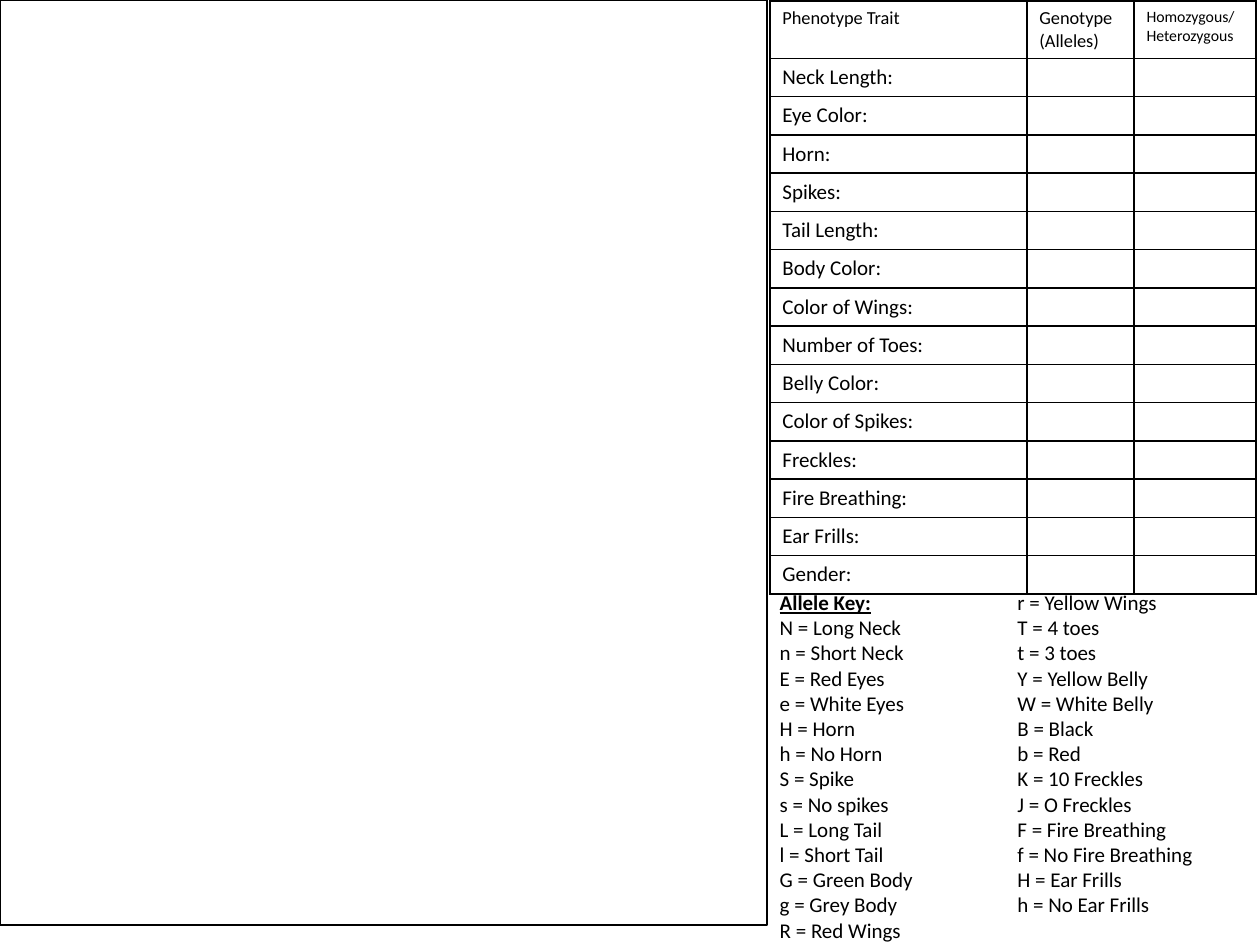
from lxml.etree import SubElement
from pptx import Presentation
from pptx.dml.color import RGBColor
from pptx.enum.shapes import MSO_SHAPE
from pptx.enum.text import MSO_ANCHOR, PP_ALIGN
from pptx.oxml.ns import qn
from pptx.util import Inches, Pt

COLORS = {"ink": "000000", "paper": "FFFFFF"}
FONT = "Calibri"

HEADERS = [("Phenotype Trait", 10.5), ("Genotype\n(Alleles)", 10.5),
           ("Homozygous/\nHeterozygous", 9)]
TRAITS = ["Neck Length", "Eye Color", "Horn", "Spikes", "Tail Length",
          "Body Color", "Color of Wings", "Number of Toes", "Belly Color",
          "Color of Spikes", "Freckles", "Fire Breathing", "Ear Frills",
          "Gender"]
ALLELES = [
    "N = Long Neck", "n = Short Neck", "E = Red Eyes", "e = White Eyes",
    "H = Horn", "h = No Horn", "S = Spike", "s = No spikes",
    "L = Long Tail", "l = Short Tail", "G = Green Body", "g = Grey Body",
    "R = Red Wings", "r = Yellow Wings", "T = 4 toes", "t = 3 toes",
    "Y = Yellow Belly", "W = White Belly", "B = Black", "b = Red",
    "K = 10 Freckles", "J = O Freckles", "F = Fire Breathing",
    "f = No Fire Breathing", "H = Ear Frills", "h = No Ear Frills"]


def rgb(name):
    return RGBColor.from_string(COLORS[name])


class Sheet:
    def __init__(self, slide, size=12):
        self.s = slide
        self.size = size

    def set_text(self, tf, text, size=None):
        size = size or self.size
        tf.text = text
        for p in tf.paragraphs:
            p.alignment = PP_ALIGN.LEFT
            for r in p.runs:
                r.font.name = FONT
                r.font.size = Pt(size)
                r.font.color.rgb = rgb("ink")
            if not p.runs:
                # An empty cell takes its line height from the end mark.
                end = SubElement(p._p, qn("a:endParaRPr"))
                end.set("sz", str(int(size * 100)))

    def frame(self, x, y, w, h):
        sp = self.s.shapes.add_shape(MSO_SHAPE.RECTANGLE, Inches(x),
                                     Inches(y), Inches(w), Inches(h))
        sp.shadow.inherit = False
        sp.fill.solid()
        sp.fill.fore_color.rgb = rgb("paper")
        sp.line.color.rgb = rgb("ink")
        sp.line.width = Pt(1)

    def cell(self, cell, text, size=None):
        self.set_text(cell.text_frame, text, size)
        cell.vertical_anchor = MSO_ANCHOR.TOP
        tc_pr = cell._tc.get_or_add_tcPr()
        for side in ("lnL", "lnR", "lnT", "lnB"):
            ln = SubElement(tc_pr, qn(f"a:{side}"), w=str(Pt(1)))
            fill = SubElement(ln, qn("a:solidFill"))
            SubElement(fill, qn("a:srgbClr"), val=COLORS["ink"])
        cell.fill.background()

    def table(self, x, y, widths, header_h, row_h, headers, labels):
        height = header_h + row_h * len(labels)
        table = self.s.shapes.add_table(
            len(labels) + 1, len(widths), Inches(x), Inches(y),
            Inches(sum(widths)), Inches(height)).table
        table.first_row = table.horz_banding = False
        for col, width in zip(table.columns, widths):
            col.width = Inches(width)
        for i, row in enumerate(table.rows):
            row.height = Inches(row_h if i else header_h)
        for c, (text, size) in enumerate(headers):
            self.cell(table.cell(0, c), text, size)
        for i, label in enumerate(labels, 1):
            for c in range(len(widths)):
                self.cell(table.cell(i, c), "" if c else f"{label}:")

    def key(self, x, y, w, h, title, lines):
        """Two-column list; the bottom inset sets where the column breaks."""
        tf = self.s.shapes.add_textbox(Inches(x), Inches(y), Inches(w),
                                       Inches(h)).text_frame
        tf.word_wrap = True
        tf.margin_bottom = Inches(0.4)
        tf._txBody.bodyPr.set("numCol", "2")
        self.set_text(tf, "\n".join([title, *lines]))
        heading = tf.paragraphs[0].runs[0].font
        heading.bold = heading.underline = True


def main():
    prs = Presentation()
    prs.slide_width, prs.slide_height = Inches(10), Inches(7.5)
    sheet = Sheet(prs.slides.add_slide(prs.slide_layouts[6]))
    sheet.frame(0, 0, 6.09, 7.34)
    sheet.table(6.11, 0.01, [2.04, 0.85, 0.97], 0.33, 0.3, HEADERS, TRAITS)
    sheet.key(6.09, 4.63, 3.97, 3.33, "Allele Key:", ALLELES)
    prs.save("out.pptx")


if __name__ == "__main__":
    main()
